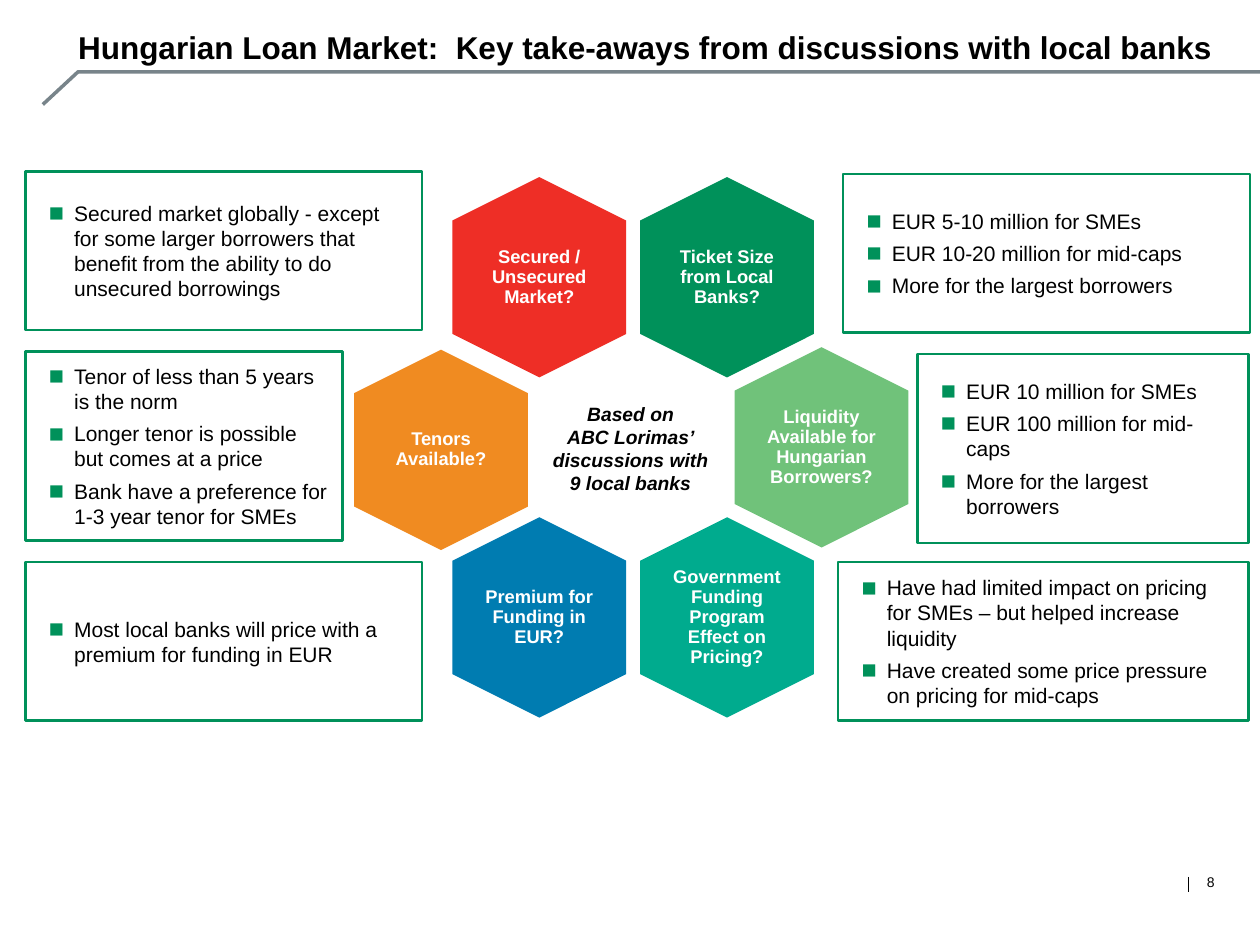
from lxml import etree
from pptx import Presentation
from pptx.dml.color import RGBColor
from pptx.enum import shapes, text
from pptx.oxml import ns
from pptx.util import Inches, Pt

COLORS = {
    "black": "000000", "white": "FFFFFF", "rule": "78848A", "green": "00915A",
    "red": "EE2E26", "orange": "F08B21", "light": "70C27A",
    "teal": "00AB8E", "blue": "007CB1",
}
FONT = "Arial"
TITLE = "Hungarian Loan Market:  Key take-aways from discussions with local banks"
CENTER = "Based on\vABC Lorimas’ discussions with\v9 local banks"
HEX_LENGTH, HEX_WIDTH = 1.59, 1.38
LABEL_WIDTH, LABEL_HEIGHT = 0.95, 1.09

HEXAGONS = [
    ("Ticket Size from Local Banks?", "green", 5.77, 2.2),
    ("Secured / Unsecured Market?", "red", 4.28, 2.2),
    ("Tenors Available?", "orange", 3.5, 3.57),
    ("Liquidity Available for Hungarian Borrowers?", "light", 6.52, 3.55),
    ("Government Funding Program Effect on Pricing?", "teal", 5.77, 4.9),
    ("Premium for Funding in EUR?", "blue", 4.28, 4.9),
]
FINDINGS = [
    ((0.2, 1.36, 3.15, 1.26), [
        "Secured market globally - except for some larger borrowers that "
        "benefit from the ability to do unsecured borrowings"]),
    ((0.2, 2.79, 2.52, 1.5), [
        "Tenor of less than 5 years is the norm",
        "Longer tenor is possible but comes at a price",
        "Bank have a preference for 1-3 year tenor for SMEs"]),
    ((0.2, 4.46, 3.15, 1.26), [
        "Most local banks will price with a premium for funding in EUR"]),
    ((6.69, 1.38, 3.23, 1.26), [
        "EUR 5-10 million for SMEs",
        "EUR 10-20 million for mid-caps",
        "More for the largest borrowers"]),
    ((7.28, 2.81, 2.63, 1.5), [
        "EUR 10 million for SMEs",
        "EUR 100 million for mid- caps",
        "More for the largest borrowers"]),
    ((6.65, 4.46, 3.26, 1.26), [
        "Have had limited impact on pricing for SMEs – but helped increase liquidity",
        "Have created some price pressure on pricing for mid-caps"]),
]


def rgb(name):
    return RGBColor.from_string(COLORS[name])


def inches(*values):
    return [Inches(value) for value in values]


def set_font(para, size, color="black", bold=False, italic=False):
    font = para.font
    font.name, font.size, font.bold, font.italic = FONT, Pt(size), bold, italic
    font.color.rgb = rgb(color)


def set_frame(box, horizontal=0, vertical=0, anchor=text.MSO_ANCHOR.MIDDLE, wrap=True):
    frame = box.text_frame
    frame.margin_left = frame.margin_right = Inches(horizontal)
    frame.margin_top = frame.margin_bottom = Inches(vertical)
    frame.vertical_anchor = anchor
    frame.word_wrap = wrap
    return frame


def add_label(page, place, content, align, **frame_options):
    frame = set_frame(page.shapes.add_textbox(*inches(*place)), **frame_options)
    para = frame.paragraphs[0]
    para.text = content
    para.alignment = align
    return para


def add_bullet(para):
    props = para._p.get_or_add_pPr()
    props.set("marL", str(Inches(0.29)))
    props.set("indent", str(Inches(-0.2)))
    color = etree.SubElement(props, ns.qn("a:buClr"))
    etree.SubElement(color, ns.qn("a:srgbClr"), val=COLORS["green"])
    etree.SubElement(props, ns.qn("a:buSzPct"), val="120000")
    etree.SubElement(props, ns.qn("a:buFont"), typeface=FONT)
    etree.SubElement(props, ns.qn("a:buChar"), char="■")


def add_header(page):
    builder = page.shapes.build_freeform(*inches(0.34, 0.83))
    builder.add_line_segments([inches(0.62, 0.57), inches(10, 0.57)], close=False)
    rule = builder.convert_to_shape()
    rule.shadow.inherit = False
    rule.fill.background()
    rule.line.color.rgb = rgb("rule")
    rule.line.width = Pt(2)

    title = page.shapes.title
    title.left, title.top, title.width, title.height = inches(0.62, 0.11, 9.38, 0.52)
    para = set_frame(title).paragraphs[0]
    para.text = TITLE
    para.alignment = text.PP_ALIGN.LEFT
    set_font(para, 18, bold=True)


def add_page_number(page):
    bar = page.shapes.add_connector(
        shapes.MSO_CONNECTOR.STRAIGHT, *inches(9.43, 6.96, 9.43, 7.08))
    bar.line.color.rgb = rgb("black")
    bar.line.width = Pt(0.75)
    etree.SubElement(bar._element.spPr, ns.qn("a:effectLst"))
    para = add_label(page, (9.44, 6.88, 0.2, 0.24), "8", text.PP_ALIGN.RIGHT, wrap=False)
    set_font(para, 8)


def add_hexagon(page, label, color, x, y):
    hexagon = page.shapes.add_shape(
        shapes.MSO_SHAPE.HEXAGON,
        *inches(x - HEX_LENGTH / 2, y - HEX_WIDTH / 2, HEX_LENGTH, HEX_WIDTH))
    hexagon.adjustments[0] = 0.25
    hexagon.rotation = 90
    hexagon.shadow.inherit = False
    hexagon.fill.solid()
    hexagon.fill.fore_color.rgb = rgb(color)
    hexagon.line.fill.background()
    place = (x - LABEL_WIDTH / 2, y - LABEL_HEIGHT / 2, LABEL_WIDTH, LABEL_HEIGHT)
    para = add_label(page, place, label, text.PP_ALIGN.CENTER)
    para.line_spacing = 0.9
    set_font(para, 10.5, "white", bold=True)


def add_finding(page, place, points):
    box = page.shapes.add_shape(shapes.MSO_SHAPE.RECTANGLE, *inches(*place))
    box.shadow.inherit = False
    box.fill.solid()
    box.fill.fore_color.rgb = rgb("white")
    box.line.color.rgb = rgb("green")
    box.line.width = Pt(1.5)
    frame = set_frame(box, 0.1, 0.05)
    for index, point in enumerate(points):
        para = frame.add_paragraph() if index else frame.paragraphs[0]
        para.text = point
        para.alignment = text.PP_ALIGN.LEFT
        if index:
            para.space_before = Pt(4)
        add_bullet(para)
        set_font(para, 12)


def main():
    deck = Presentation()
    deck.slide_width, deck.slide_height = inches(10, 7.5)
    page = deck.slides.add_slide(deck.slide_layouts[5])
    add_header(page)
    add_page_number(page)
    for hexagon in HEXAGONS:
        add_hexagon(page, *hexagon)
    for finding in FINDINGS:
        add_finding(page, *finding)
    para = add_label(page, (4.22, 3.14, 1.57, 0.84), CENTER, text.PP_ALIGN.CENTER,
                     horizontal=0.1, vertical=0.05, anchor=text.MSO_ANCHOR.TOP)
    set_font(para, 11, bold=True, italic=True)
    deck.save("out.pptx")


if __name__ == "__main__":
    main()
